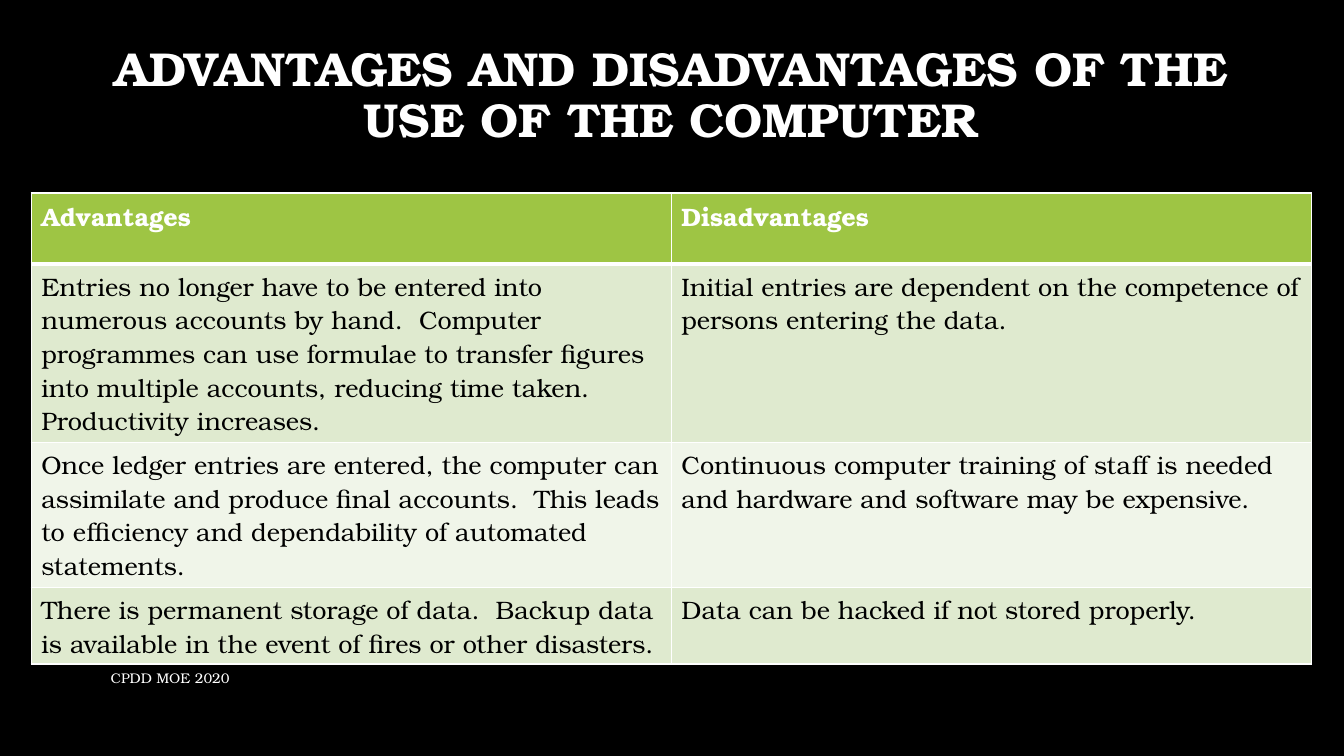
from dataclasses import dataclass

from lxml import etree
from pptx import Presentation
from pptx.dml.color import RGBColor
from pptx.enum.text import MSO_ANCHOR, PP_ALIGN
from pptx.oxml.ns import qn
from pptx.util import Pt

MIDDLE = MSO_ANCHOR.MIDDLE
LEFT, CENTER = PP_ALIGN.LEFT, PP_ALIGN.CENTER


@dataclass(frozen=True)
class Theme:
    """Colours, font and type sizes of the slide."""
    font: str = "TeX Gyre Bonum"
    back: str = "000000"
    light: str = "FFFFFF"
    dark: str = "000000"
    head: str = "9EC544"
    bands: tuple = ("DFEACF", "F0F5E9")
    title: int = 34
    body: int = 18
    foot: int = 10


THEME = Theme()
HEIGHTS = (51, 127.5, 103.5, 54.5)
ROWS = (
    ("Advantages", "Disadvantages"),
    ("Entries no longer have to be entered into numerous accounts by hand.  "
     "Computer programmes can use formulae to transfer figures into multiple "
     "accounts, reducing time taken.  Productivity increases.",
     "Initial entries are dependent on the competence of persons entering "
     "the data."),
    ("Once ledger entries are entered, the computer can assimilate and "
     "produce final accounts.  This leads to efficiency and dependability "
     "of automated statements.",
     "Continuous computer training of staff is needed and hardware and "
     "software may be expensive."),
    ("There is permanent storage of data.  Backup data is available in the "
     "event of fires or other disasters.",
     "Data can be hacked if not stored properly."),
)


def style(frame, size, color, bold=False):
    """Format every run of a text frame."""
    for par in frame.paragraphs:
        for run in par.runs:
            font = run.font
            font.name, font.size, font.bold = THEME.font, Pt(size), bold
            font.color.rgb = RGBColor.from_string(color)


def add_text(slide, text, box, size, bold=False, align=LEFT, space=1.0):
    """Add a wrapped text box, centred in height."""
    frame = slide.shapes.add_textbox(*map(Pt, box)).text_frame
    frame.word_wrap = True
    frame.vertical_anchor = MIDDLE
    frame.text = text
    frame.paragraphs[0].alignment = align
    frame.paragraphs[0].line_spacing = space
    style(frame, size, THEME.light, bold)


def add_edge(cell, side, width):
    """Draw one light border of a cell."""
    props = cell._tc.get_or_add_tcPr()
    line = etree.SubElement(props, qn(f"a:ln{side}"), w=str(Pt(width)))
    fill = etree.SubElement(line, qn("a:solidFill"))
    etree.SubElement(fill, qn("a:srgbClr"), val=THEME.light)


def fill_cell(cell, text, row):
    """Write, border and colour a cell according to its row."""
    head = row == 0
    for side in "LRTB":
        rule = (row, side) in ((0, "B"), (1, "T"))
        add_edge(cell, side, 3 if rule else 1)
    color = THEME.head if head else THEME.bands[(row - 1) % 2]
    cell.fill.solid()
    cell.fill.fore_color.rgb = RGBColor.from_string(color)
    cell.text_frame.text = text
    style(cell.text_frame, THEME.body, THEME.light if head else THEME.dark,
          head)


def add_grid(slide, rows, heights, left, top, width):
    """Add the table with equal columns."""
    shape = slide.shapes.add_table(len(rows), len(rows[0]), Pt(left), Pt(top),
                                   Pt(width), Pt(sum(heights)))
    table = shape.table
    for row, (texts, height) in enumerate(zip(rows, heights)):
        table.rows[row].height = Pt(height)
        for col, text in enumerate(texts):
            fill_cell(table.cell(row, col), text, row)


def main():
    """Build and save the slide."""
    deck = Presentation()
    deck.slide_width, deck.slide_height = Pt(960), Pt(540)
    slide = deck.slides.add_slide(deck.slide_layouts[6])
    slide.background.fill.solid()
    slide.background.fill.fore_color.rgb = RGBColor.from_string(THEME.back)
    add_text(slide, "ADVANTAGES AND DISADVANTAGES OF THE USE OF THE COMPUTER",
             (72, 28.8, 815, 80.6), THEME.title, True, CENTER, 0.9)
    add_grid(slide, ROWS, HEIGHTS, 22.3, 137.8, 914.4)
    add_text(slide, "CPDD MOE 2020", (72, 470, 525.6, 28.8), THEME.foot)
    deck.save("out.pptx")


if __name__ == "__main__":
    main()
